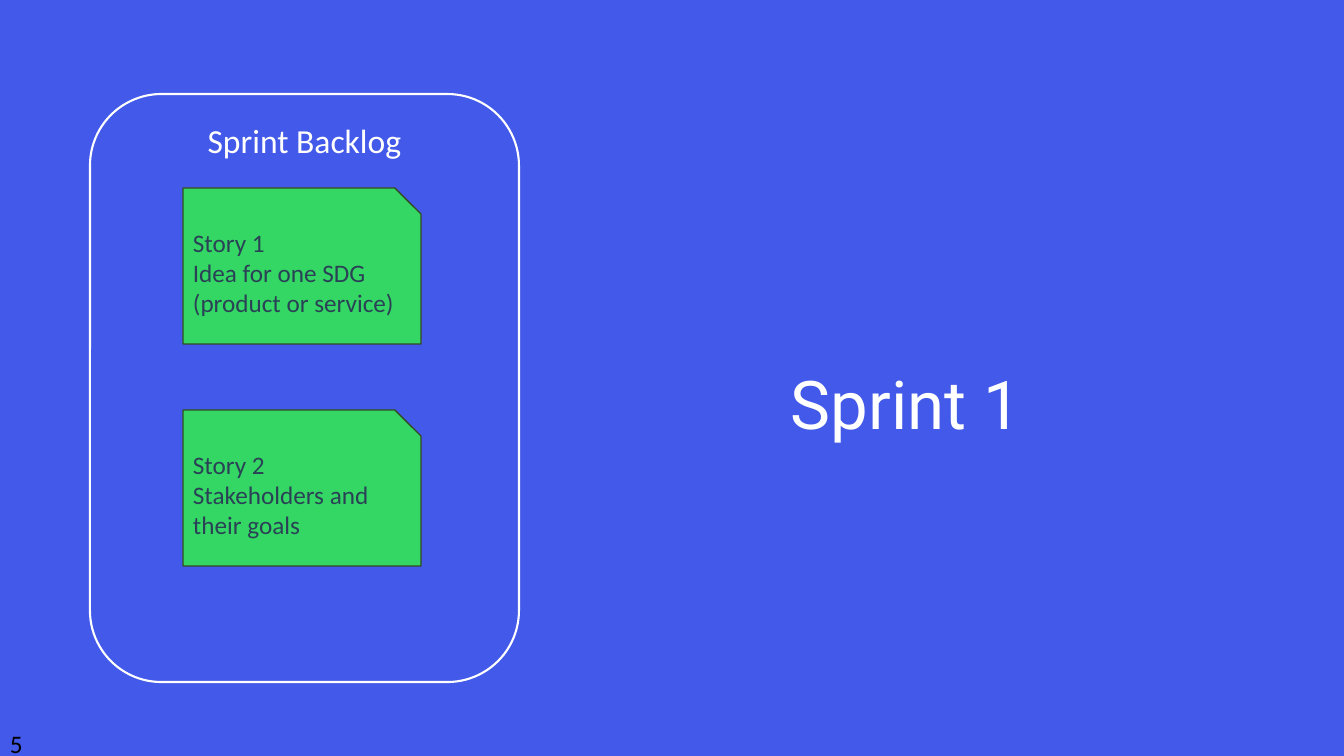
from dataclasses import dataclass

from pptx import Presentation
from pptx.dml.color import RGBColor
from pptx.enum.shapes import MSO_SHAPE
from pptx.enum.text import MSO_ANCHOR, PP_ALIGN
from pptx.util import Emu, Pt

ROUNDED = MSO_SHAPE.ROUNDED_RECTANGLE
SNIPPED = MSO_SHAPE.SNIP_1_RECTANGLE
TOP, MIDDLE = MSO_ANCHOR.TOP, MSO_ANCHOR.MIDDLE
LEFT, CENTER = PP_ALIGN.LEFT, PP_ALIGN.CENTER
EMU_PER_PX = 914400 / 100.8
SLIDE_SIZE = (1344, 756)
STORIES = [
    ["Story 1", "Idea for one SDG", "(product or service)"],
    ["Story 2", "Stakeholders and their goals"],
]


@dataclass(frozen=True)
class Theme:
    """Colours, fonts and type sizes of the slide."""

    blue: str = "4359E9"
    white: str = "FFFFFF"
    green: str = "34D764"
    card_edge: str = "314C1F"
    card_ink: str = "2A4156"
    black: str = "000000"
    body_font: str = "Calibri"
    title_font: str = "Roboto"
    title_size: int = 48
    heading_size: int = 24
    body_size: int = 18


THEME = Theme()


def px(length):
    """Turn a length in px into EMU."""
    return Emu(round(length * EMU_PER_PX))


def write(frame, lines, size, color, font=THEME.body_font, align=LEFT, anchor=TOP):
    """Fill a text frame with one paragraph per line."""
    frame.word_wrap = True
    frame.vertical_anchor = anchor
    for index, line in enumerate(lines):
        paragraph = frame.add_paragraph() if index else frame.paragraphs[0]
        paragraph.text = line
        paragraph.alignment = align
        paragraph.font.name = font
        paragraph.font.size = Pt(size)
        paragraph.font.color.rgb = RGBColor.from_string(color)


def add_panel(slide, preset, box, fill, edge, edge_width):
    """Add a filled and outlined preset shape."""
    panel = slide.shapes.add_shape(preset, *map(px, box))
    panel.shadow.inherit = False
    panel.fill.solid()
    panel.fill.fore_color.rgb = RGBColor.from_string(fill)
    panel.line.color.rgb = RGBColor.from_string(edge)
    panel.line.width = Pt(edge_width)
    return panel


def add_backlog(slide, box):
    """Place the sprint backlog with its column of story cards."""
    left, top, _, _ = box
    backlog = add_panel(slide, ROUNDED, box, THEME.blue, THEME.white, 1.5)
    write(backlog.text_frame, ["Sprint Backlog"], THEME.heading_size,
          THEME.white, align=CENTER)
    for row, story in enumerate(STORIES):
        card_box = (left + 93, top + 94 + row * 222, 238, 156)
        card = add_panel(slide, SNIPPED, card_box, THEME.green, THEME.card_edge, 1)
        write(card.text_frame, story, THEME.body_size, THEME.card_ink, anchor=MIDDLE)


def add_title(slide, box):
    """Place the sprint title in the right half."""
    title = slide.shapes.add_textbox(*map(px, box)).text_frame
    title.margin_top = px(270)
    write(title, ["Sprint 1"], THEME.title_size, THEME.white,
          THEME.title_font, CENTER)


def add_page_number(slide, box):
    """Place the page number in the bottom corner."""
    number = slide.shapes.add_textbox(*map(px, box)).text_frame
    write(number, ["5"], THEME.body_size, THEME.black)


def build_sprint_slide(deck):
    """Compose the sprint slide."""
    slide = deck.slides.add_slide(deck.slide_layouts[6])
    slide.background.fill.solid()
    slide.background.fill.fore_color.rgb = RGBColor.from_string(THEME.blue)
    add_title(slide, (562, 92, 688, 580))
    add_page_number(slide, (0, 723, 55, 33))
    add_backlog(slide, (90, 94, 429, 588))


def main():
    """Build and save the deck."""
    deck = Presentation()
    deck.slide_width, deck.slide_height = map(px, SLIDE_SIZE)
    build_sprint_slide(deck)
    deck.save("out.pptx")


if __name__ == "__main__":
    main()
